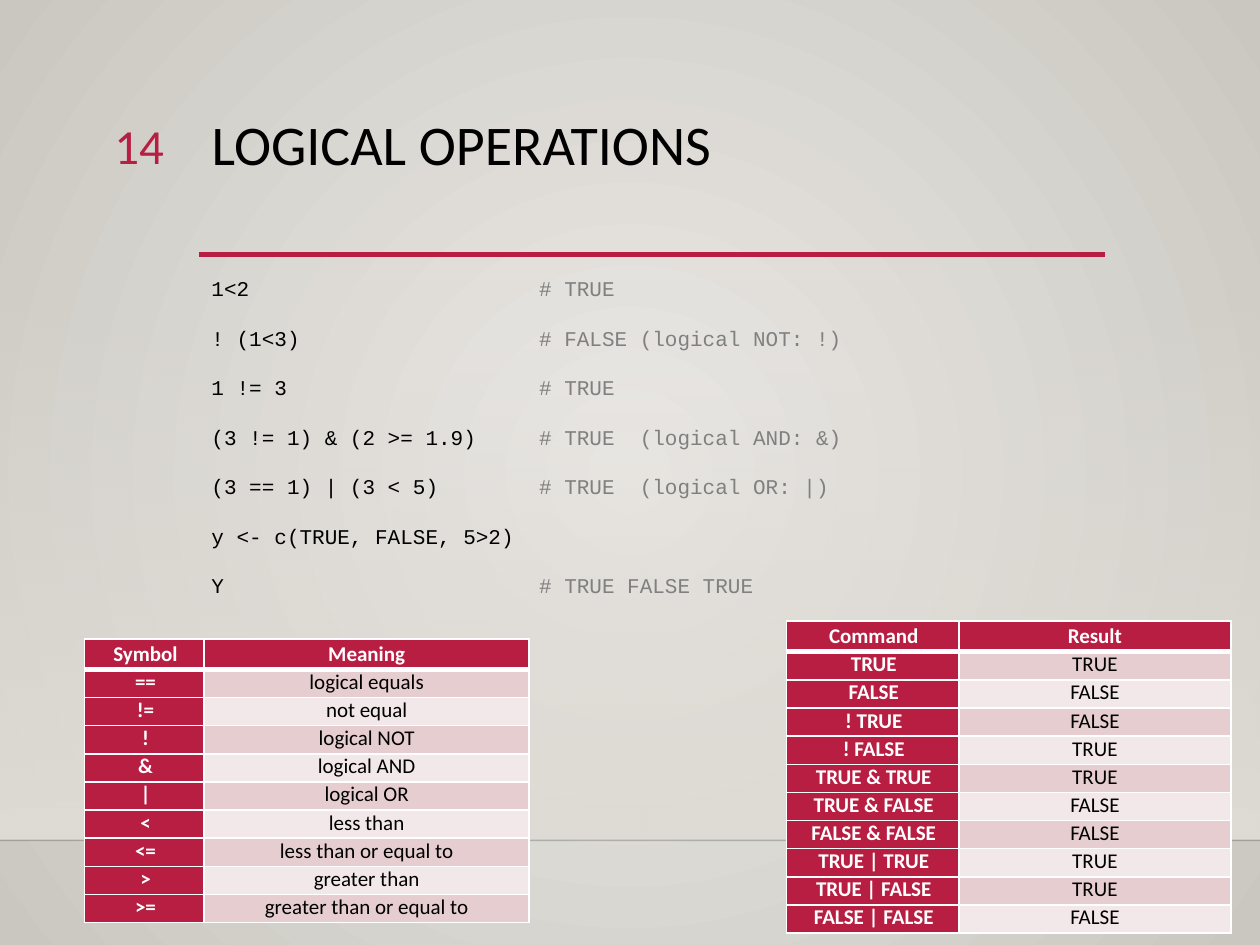
from dataclasses import dataclass
from typing import NamedTuple

from lxml.etree import SubElement
from pptx import Presentation
from pptx.dml.color import RGBColor
from pptx.enum.shapes import MSO_CONNECTOR as Connector
from pptx.enum.shapes import MSO_SHAPE as Shape
from pptx.enum.text import MSO_ANCHOR as Anchor
from pptx.enum.text import MSO_AUTO_SIZE as AutoSize
from pptx.enum.text import PP_ALIGN as Align
from pptx.oxml.ns import qn
from pptx.util import Inches, Pt

CRIMSON, BLACK, WHITE, GRAY = "B71E42", "000000", "FFFFFF", "808080"
BAND_FILLS = ("E6CDCF", "F3E8E9")
HEADER_HEIGHT, ROW_HEIGHT, CELL_MARGIN = 0.24, 0.22, 0.02
COMMENT_TAB = 2.6


class Box(NamedTuple):
    left: float
    top: float
    width: float
    height: float

    def lengths(self) -> list:
        return [Inches(value) for value in self]


class CodeLine(NamedTuple):
    code: str
    comment: str = ""


@dataclass
class Rule:
    left: float
    right: float
    top: float
    color: str
    width: float
    opacity: int = 100


@dataclass
class LookupTable:
    left: float
    top: float
    columns: tuple
    rows: list


RULES = [
    Rule(0, 10, 6.67, "000001", 1, 20),
    Rule(1.58, 8.77, 2.02, CRIMSON, 2.5),
]

CODE = [
    CodeLine("1<2", "# TRUE"),
    CodeLine("! (1<3)", "# FALSE (logical NOT: !)"),
    CodeLine("1 != 3", "# TRUE"),
    CodeLine("(3 != 1) & (2 >= 1.9)", "# TRUE  (logical AND: &)"),
    CodeLine("(3 == 1) | (3 < 5)", "# TRUE  (logical OR: |)"),
    CodeLine("y <- c(TRUE, FALSE, 5>2)"),
    CodeLine("Y", "# TRUE FALSE TRUE"),
]

TABLES = [
    LookupTable(0.67, 5.07, (0.95, 2.58), [
        ("Symbol", "Meaning"),
        ("==", "logical equals"),
        ("!=", "not equal"),
        ("!", "logical NOT"),
        ("&", "logical AND"),
        ("|", "logical OR"),
        ("<", "less than"),
        ("<=", "less than or equal to"),
        (">", "greater than"),
        (">=", "greater than or equal to"),
    ]),
    LookupTable(6.24, 4.93, (1.37, 2.16), [
        ("Command", "Result"),
        ("TRUE", "TRUE"),
        ("FALSE", "FALSE"),
        ("! TRUE", "FALSE"),
        ("! FALSE", "TRUE"),
        ("TRUE & TRUE", "TRUE"),
        ("TRUE & FALSE", "FALSE"),
        ("FALSE & FALSE", "FALSE"),
        ("TRUE | TRUE", "TRUE"),
        ("TRUE | FALSE", "TRUE"),
        ("FALSE | FALSE", "FALSE"),
    ]),
]


def rgb(color: str) -> RGBColor:
    return RGBColor.from_string(color)


def apply_format(target, values: dict) -> None:
    for name, value in values.items():
        setattr(target, name, value)


def add_run(paragraph, text: str, color: str, size: float, name: str = "Calibri", bold: bool = False) -> None:
    run = paragraph.add_run()
    run.text = text
    apply_format(run.font, {"size": Pt(size), "name": name, "bold": bold})
    run.font.color.rgb = rgb(color)


def set_opacity(color_parent, percent: int) -> None:
    color = color_parent.find(".//" + qn("a:srgbClr"))
    SubElement(color, qn("a:alpha"), val=str(percent * 1000))


def set_gradient(fill, parent, colors: tuple):
    fill.gradient()
    for stop, color, position in zip(fill.gradient_stops, colors, (0, 1)):
        stop.color.rgb = rgb(color)
        stop.position = position
    gradient = parent.find(".//" + qn("a:gradFill"))
    for direction in gradient.findall(qn("a:lin")):
        gradient.remove(direction)
    return gradient


def paint_background(slide) -> None:
    background = slide.background.fill
    gradient = set_gradient(background, slide.element, ("ECEAE7", "CAC7C1"))
    circle = SubElement(gradient, qn("a:path"), path="circle")
    SubElement(circle, qn("a:fillToRect"), l="50000", t="50000", r="50000", b="50000")

    wall = slide.shapes.add_shape(Shape.RECTANGLE, *Box(0, 2.2, 10, 4.46).lengths())
    wall.shadow.inherit = False
    wall.line.fill.background()
    gradient = set_gradient(wall.fill, wall.element, ("DFDBD5", "DFDBD5"))
    set_opacity(gradient, 0)
    SubElement(gradient, qn("a:lin"), ang="5400000", scaled="0")


def add_rule(slide, rule: Rule) -> None:
    ends = [Inches(value) for value in (rule.left, rule.top, rule.right, rule.top)]
    connector = slide.shapes.add_connector(Connector.STRAIGHT, *ends)
    connector.line.width = Pt(rule.width)
    connector.line.color.rgb = rgb(rule.color)
    properties = connector.element.spPr
    if rule.opacity < 100:
        set_opacity(properties, rule.opacity)
    SubElement(properties, qn("a:effectLst"))


def prepare_frame(shape):
    frame = shape.text_frame
    apply_format(frame, {"word_wrap": True, "auto_size": AutoSize.NONE, "vertical_anchor": Anchor.TOP})
    return frame


def add_title(slide, text: str) -> None:
    title = slide.shapes.title
    apply_format(title, dict(zip(Box._fields, Box(1.58, 0.88, 7.19, 1.15).lengths())))
    paragraph = prepare_frame(title).paragraphs[0]
    apply_format(paragraph, {"alignment": Align.LEFT, "line_spacing": 0.9})
    add_run(paragraph, text, BLACK, 32)


def add_slide_number(slide, number: str) -> None:
    box = slide.shapes.add_textbox(*Box(0.53, 0.87, 0.87, 0.55).lengths())
    paragraph = prepare_frame(box).paragraphs[0]
    paragraph.alignment = Align.RIGHT
    add_run(paragraph, number, CRIMSON, 28)


def add_code(slide, lines: list) -> None:
    frame = prepare_frame(slide.shapes.add_textbox(*Box(1.58, 2.1, 7.19, 2.76).lengths()))
    for index, line in enumerate(lines):
        paragraph = frame.add_paragraph() if index else frame.paragraphs[0]
        apply_format(paragraph, {"line_spacing": 1.2, "space_before": Pt(11 if index else 0)})
        add_run(paragraph, line.code, BLACK, 12, "Courier New")
        if line.comment:
            tabs = SubElement(paragraph._p.get_or_add_pPr(), qn("a:tabLst"))
            SubElement(tabs, qn("a:tab"), pos=str(Inches(COMMENT_TAB)), algn="l")
            add_run(paragraph, "\t" + line.comment, GRAY, 12, "Courier New")


def add_border(cell, side: str, width: float) -> None:
    border = SubElement(cell._tc.get_or_add_tcPr(), qn("a:ln" + side), w=str(Pt(width)))
    SubElement(SubElement(border, qn("a:solidFill")), qn("a:srgbClr"), val=WHITE)


def fill_cell(cell, text: str, row: int, column: int) -> None:
    accent = row == 0 or column == 0
    apply_format(cell, {
        "margin_left": Inches(CELL_MARGIN),
        "margin_right": Inches(CELL_MARGIN if column else 0),
        "margin_top": Inches(0 if row else CELL_MARGIN),
        "margin_bottom": Inches(CELL_MARGIN),
        "vertical_anchor": Anchor.MIDDLE,
    })
    for side in "LRTB":
        under_header = (row, side) in ((0, "B"), (1, "T"))
        add_border(cell, side, 3 if under_header else 1)
    cell.fill.solid()
    cell.fill.fore_color.rgb = rgb(CRIMSON if accent else BAND_FILLS[(row - 1) % 2])
    paragraph = cell.text_frame.paragraphs[0]
    apply_format(paragraph, {"alignment": Align.CENTER, "space_after": Pt(2.1)})
    add_run(paragraph, text, WHITE if accent else BLACK, 12, bold=accent)


def add_lookup_table(slide, lookup: LookupTable) -> None:
    count = len(lookup.rows)
    height = HEADER_HEIGHT + ROW_HEIGHT * (count - 1)
    box = Box(lookup.left, lookup.top, sum(lookup.columns), height)
    table = slide.shapes.add_table(count, len(lookup.columns), *box.lengths()).table
    for column, width in zip(table.columns, lookup.columns):
        column.width = Inches(width)
    for row, texts in enumerate(lookup.rows):
        table.rows[row].height = Inches(ROW_HEIGHT if row else HEADER_HEIGHT)
        for column, text in enumerate(texts):
            fill_cell(table.cell(row, column), text, row, column)


def main() -> None:
    presentation = Presentation()
    apply_format(presentation, {"slide_width": Inches(10), "slide_height": Inches(7.5)})
    slide = presentation.slides.add_slide(presentation.slide_layouts[5])
    paint_background(slide)
    for rule in RULES:
        add_rule(slide, rule)
    add_title(slide, "LOGICAL OPERATIONS")
    add_code(slide, CODE)
    add_slide_number(slide, "14")
    for lookup in TABLES:
        add_lookup_table(slide, lookup)
    presentation.save("out.pptx")


if __name__ == "__main__":
    main()
